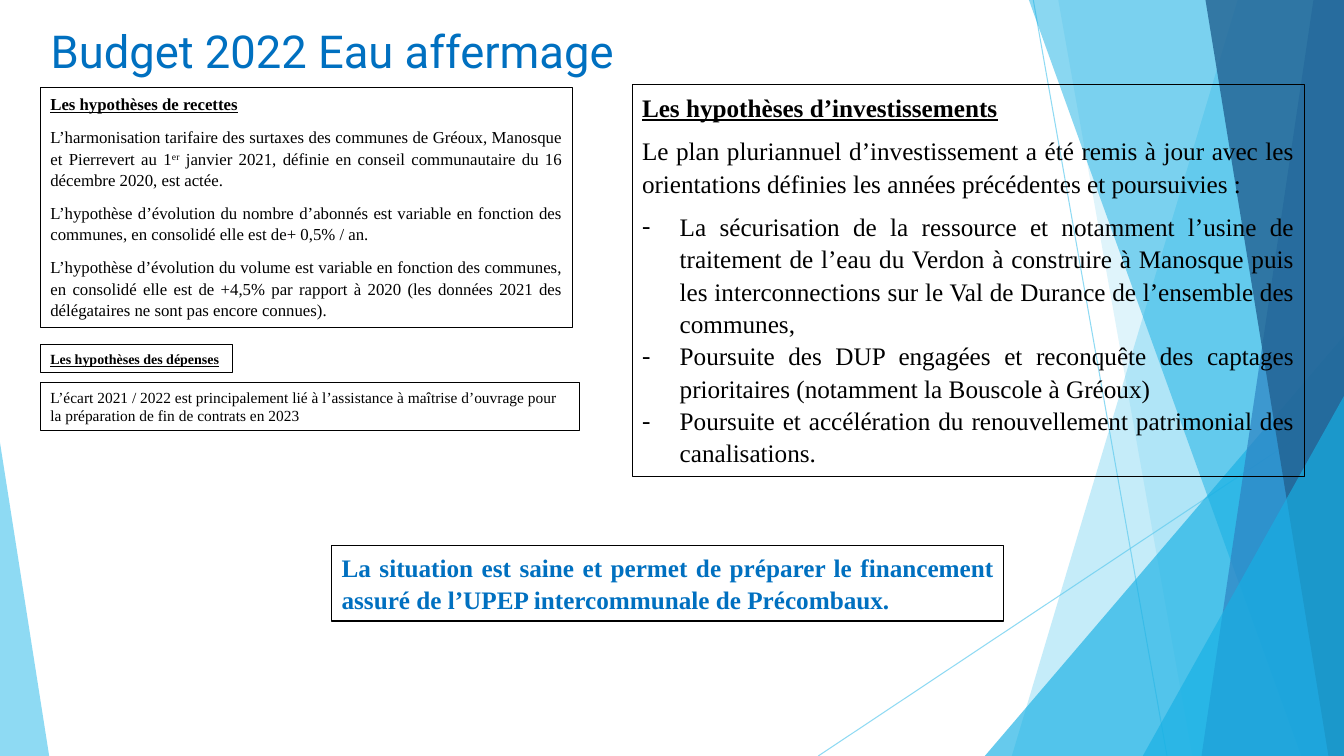
from dataclasses import dataclass

from lxml.etree import SubElement
from pptx import Presentation
from pptx.dml.color import RGBColor
from pptx.enum.shapes import MSO_CONNECTOR, MSO_SHAPE
from pptx.enum.text import MSO_ANCHOR as Anchor, MSO_AUTO_SIZE as AutoSize, PP_ALIGN as Align
from pptx.oxml.ns import qn
from pptx.util import Cm, Pt

TITLE = "Budget 2022 Eau affermage"
TITLE_BOX = (1.02, 0.48, 23.88, 1.57)

# Boxes: place in cm, text size, wrap, paragraphs as (style, text); ^...^ is superscript
BOXES = [
    ((1.02, 8.69, 4.83, 0.69), "tiny", False, [
        ("heading", "Les hypothèses des dépenses"),
    ]),
    ((1.02, 2.21, 13.41, 6.05), "small", True, [
        ("heading", "Les hypothèses de recettes"),
        ("body", "L’harmonisation tarifaire des surtaxes des communes de Gréoux, Manosque et "
                 "Pierrevert au 1^er^ janvier 2021, définie en conseil communautaire du "
                 "16 décembre 2020, est actée."),
        ("body", "L’hypothèse d’évolution du nombre d’abonnés est variable en fonction des "
                 "communes, en consolidé elle est de+ 0,5% / an."),
        ("body", "L’hypothèse d’évolution du volume est variable en fonction des communes, "
                 "en consolidé elle est de +4,5% par rapport à 2020 (les données 2021 des "
                 "délégataires ne sont pas encore connues)."),
    ]),
    ((1.02, 9.65, 13.59, 1.19), "note", True, [
        ("note", "L’écart 2021 / 2022 est principalement lié à l’assistance à maîtrise "
                 "d’ouvrage pour la préparation de fin de contrats en 2023"),
    ]),
    ((15.93, 2.14, 16.94, 9.88), "large", True, [
        ("heading", "Les hypothèses d’investissements"),
        ("body", "Le plan pluriannuel d’investissement a été remis à jour avec les "
                 "orientations définies les années précédentes et poursuivies :"),
        ("bullet", "La sécurisation de la ressource et notamment l’usine de traitement de "
                   "l’eau du Verdon à construire à Manosque puis les interconnections sur le "
                   "Val de Durance de l’ensemble des communes,"),
        ("bullet", "Poursuite des DUP engagées et reconquête des captages prioritaires "
                   "(notamment la Bouscole à Gréoux)"),
        ("bullet", "Poursuite et accélération du renouvellement patrimonial des canalisations."),
    ]),
    ((8.36, 13.74, 16.94, 1.91), "large", True, [
        ("key", "La situation est saine et permet de préparer le financement assuré de "
                "l’UPEP intercommunale de Précombaux."),
    ]),
]

WIDTH, HEIGHT = 33.87, 19.05

# Background: thin lines, then facets from back to front with opacity in %
RAYS = [((26.04, 0), (29.41, HEIGHT)), ((WIDTH, 10.24), (20.62, HEIGHT))]
FACETS = [  # bands: left edge at top and bottom; triangles: left, top, width, apex
    ("band", (31.19, 25.5), "sky", 36),
    ("band", (26.67, 30.05), "sky", 20),
    ("triangle", (24.82, 8.46, 9.05, 1), "cyan", 66),
    ("band", (25.93, 32.79), "cyan", 50),
    ("band", (33.1, 30.28), "blue", 70),
    ("band", (30.38, 33.48), "navy", 80),
    ("triangle", (28.8, 9.98, 5.07, 1), "cyan", 66),
    ("triangle", (0, 11.15, 1.24, 0), "sky", 70),
]


@dataclass(frozen=True)
class Theme:
    title_font = "Roboto"
    text_font = "Times New Roman"
    sizes = {"title": 32.4, "large": 18, "small": 12, "note": 11, "tiny": 10}
    colors = {"sky": "5FCBEF", "cyan": "17B0E4", "blue": "2E83C3", "navy": "226292",
              "accent": "0070C0", "ink": "000000"}
    line_width = 0.75
    line_spacing = 1.07
    space_after = 8
    bullet_indent = 0.95

    def rgb(self, name):
        return RGBColor.from_string(self.colors[name])


theme = Theme()


def set_alpha(fill_parent, percent):
    """Make the solid fill found inside an element translucent."""
    clr = fill_parent.find(".//" + qn("a:srgbClr"))
    SubElement(clr, qn("a:alpha")).set("val", str(percent * 1000))


def add_ray(slide, start, end):
    ray = slide.shapes.add_connector(MSO_CONNECTOR.STRAIGHT, *map(Cm, start + end))
    ray.line.color.rgb = theme.rgb("sky")
    ray.line.width = Pt(theme.line_width)
    sp_pr = ray._element.spPr
    set_alpha(sp_pr, 70)
    SubElement(sp_pr, qn("a:effectLst"))


def add_facet(slide, kind, place, color, opacity):
    if kind == "band":
        top_x, bottom_x = place
        builder = slide.shapes.build_freeform(Cm(top_x), 0)
        builder.add_line_segments([(Cm(x), Cm(y)) for x, y in
                                   ((WIDTH, 0), (WIDTH, HEIGHT), (bottom_x, HEIGHT))])
        sp = builder.convert_to_shape()
    else:
        left, top, width, apex = place
        sp = slide.shapes.add_shape(MSO_SHAPE.ISOSCELES_TRIANGLE,
                                    *map(Cm, (left, top, width, HEIGHT - top)))
        sp.adjustments[0] = apex
    sp.shadow.inherit = False
    sp.fill.solid()
    sp.fill.fore_color.rgb = theme.rgb(color)
    set_alpha(sp._element.spPr, opacity)
    sp.line.fill.background()


def format_font(font, name, size, color):
    font.name = name
    font.size = Pt(theme.sizes[size])
    font.color.rgb = theme.rgb(color)


def add_bullet(p):
    pPr = p._p.get_or_add_pPr()
    indent = Cm(theme.bullet_indent)
    pPr.set("marL", str(indent))
    pPr.set("indent", str(-indent))
    SubElement(pPr, qn("a:buFont")).set("typeface", theme.text_font)
    SubElement(pPr, qn("a:buChar")).set("char", "-")


def fill_paragraph(p, style, text, size):
    p.alignment = Align.LEFT if style == "note" else Align.JUSTIFY
    if style != "note":
        p.line_spacing = theme.line_spacing
    if style in ("heading", "body"):
        p.space_after = Pt(theme.space_after)
    if style == "bullet":
        add_bullet(p)
    for i, part in enumerate(text.split("^")):
        r = p.add_run()
        r.text = part
        format_font(r.font, theme.text_font, size, "accent" if style == "key" else "ink")
        r.font.bold = style in ("heading", "key")
        r.font.underline = style == "heading"
        if i % 2:
            r._r.get_or_add_rPr().set("baseline", "30000")


def add_box(slide, place, size, wrap, paragraphs):
    sp = slide.shapes.add_shape(MSO_SHAPE.RECTANGLE, *map(Cm, place))
    sp.shadow.inherit = False
    sp.fill.background()
    sp.line.color.rgb = theme.rgb("ink")
    sp.line.width = Pt(theme.line_width)
    tf = sp.text_frame
    tf.word_wrap = wrap
    tf.auto_size = AutoSize.SHAPE_TO_FIT_TEXT
    tf.vertical_anchor = Anchor.TOP
    for i, (style, text) in enumerate(paragraphs):
        p = tf.add_paragraph() if i else tf.paragraphs[0]
        fill_paragraph(p, style, text, size)


def set_title(slide):
    title = slide.shapes.title
    title.left, title.top, title.width, title.height = map(Cm, TITLE_BOX)
    tf = title.text_frame
    tf.text = TITLE
    tf.auto_size = AutoSize.NONE
    tf.vertical_anchor = Anchor.MIDDLE
    p = tf.paragraphs[0]
    p.alignment = Align.LEFT
    format_font(p.runs[0].font, theme.title_font, "title", "accent")


def main():
    prs = Presentation()
    prs.slide_width, prs.slide_height = Cm(WIDTH), Cm(HEIGHT)
    slide = prs.slides.add_slide(prs.slide_layouts[5])
    set_title(slide)
    for ray in RAYS:
        add_ray(slide, *ray)
    for facet in FACETS:
        add_facet(slide, *facet)
    for box in BOXES:
        add_box(slide, *box)
    prs.save("out.pptx")


if __name__ == "__main__":
    main()
